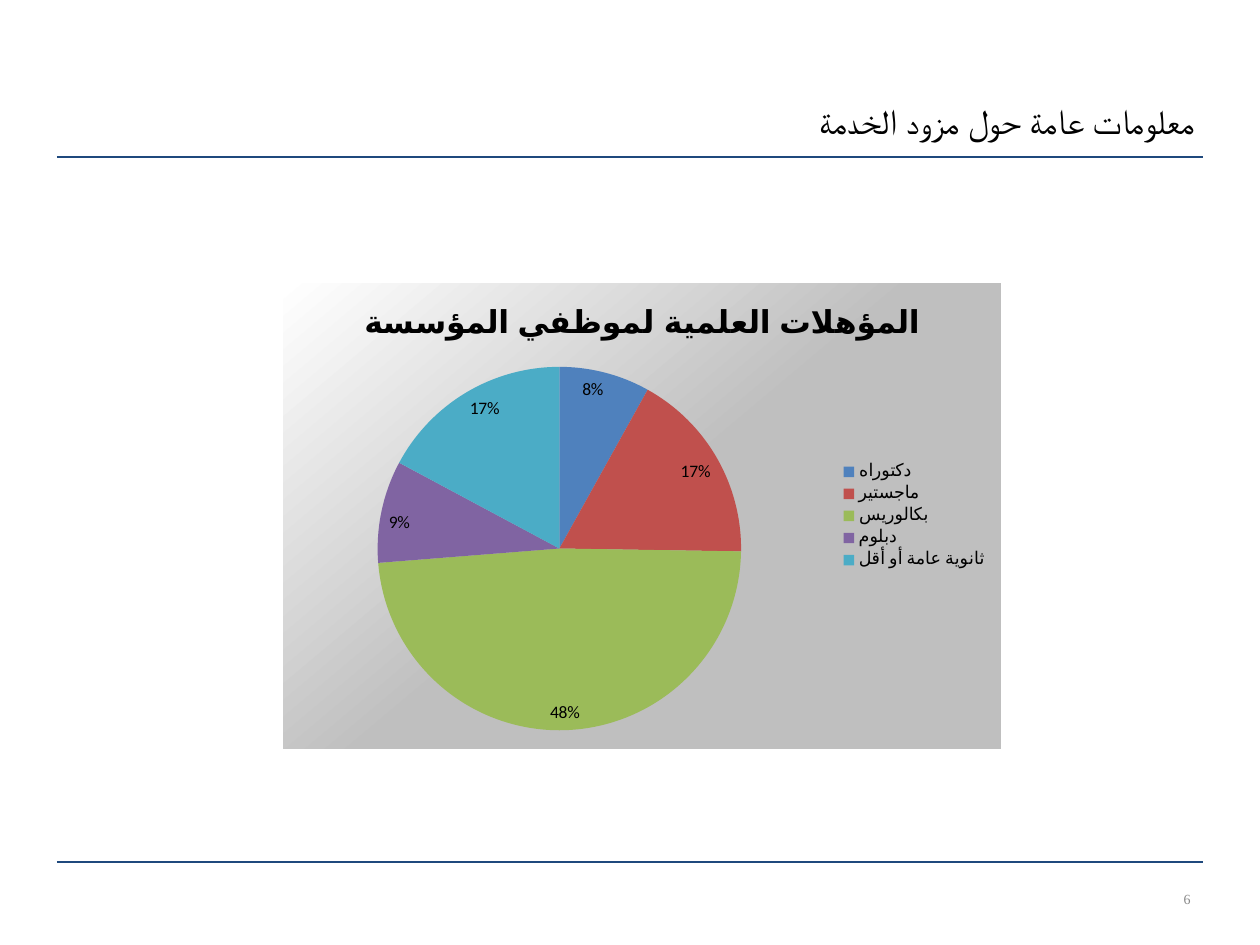
import pptx
import pptx.util
import pptx.chart.data
import pptx.dml.color
import pptx.enum.chart
import pptx.enum.shapes
import pptx.enum.text
import pptx.oxml
import pptx.oxml.ns
import lxml.etree

SCALE = 914400 // 126
THEME = {
    "rule": "1F497D", "text": "000000", "muted": "898989",
    "slices": ["4F81BD", "C0504D", "9BBB59", "8064A2", "4BACC6"],
    "backdrop": [(0, "FFFFFF"), (50, "BFBFBF"), (100, "BFBFBF")], "angle": 50,
    "heading_size": 20, "chart_title_size": 18, "chart_size": 10, "number_size": 8,
}
HEADING = "معلومات عامة حول مزود الخدمة"
PAGE_NUMBER = "6"
CHART_TITLE = "المؤهلات العلمية لموظفي المؤسسة"
QUALIFICATIONS = [
    ("دكتوراه", 8), ("ماجستير", 17), ("بكالوريس", 48), ("دبلوم", 9),
    ("ثانوية عامة أو أقل", 17),
]
RULE_SPAN = (57, 1203)
RULE_TOPS = (157, 862)
HEADING_AREA = (291, 37, 916, 111)
NUMBER_AREA = (1089, 871, 114, 55)
CHART_AREA = (283, 283, 718, 466)
PIE_LAYOUT = {"x": 0.13, "y": 0.18, "w": 0.51, "h": 0.78}


def emu(*lengths):
    return [pptx.util.Emu(length * SCALE) for length in lengths]


def rgb(value):
    return pptx.dml.color.RGBColor.from_string(value)


def set_font(font, size, color, name, bold=False):
    font.color.rgb = rgb(color)
    formats = {"size": pptx.util.Pt(size), "name": name, "bold": bold}
    for key, value in formats.items():
        setattr(font, key, value)


def add_rule(page, top):
    left, right = RULE_SPAN
    rule = page.shapes.add_connector(
        pptx.enum.shapes.MSO_CONNECTOR.STRAIGHT, *emu(left, top, right, top))
    rule.line.color.rgb = rgb(THEME["rule"])
    rule.line.width = pptx.util.Pt(0.75)
    properties = rule.element.find(pptx.oxml.ns.qn("p:spPr"))
    lxml.etree.SubElement(properties, pptx.oxml.ns.qn("a:effectLst"))


def add_text(page, area, text, anchor, size, color, name, rtl=False):
    frame = page.shapes.add_textbox(*emu(*area)).text_frame
    formats = {"word_wrap": True, "vertical_anchor": anchor}
    for key, value in formats.items():
        setattr(frame, key, value)
    para = frame.paragraphs[0]
    para.alignment = pptx.enum.text.PP_ALIGN.RIGHT
    if rtl:
        para._p.get_or_add_pPr().set("rtl", "1")
    span = para.add_run()
    span.text = text
    set_font(span.font, size, color, name)


def fill_backdrop(chart):
    stops = "".join(
        f'<a:gs pos="{place * 1000}"><a:srgbClr val="{color}"/></a:gs>'
        for place, color in THEME["backdrop"])
    backdrop = pptx.oxml.parse_xml(
        f'<c:spPr {pptx.oxml.ns.nsdecls("c", "a")}><a:gradFill><a:gsLst>{stops}</a:gsLst>'
        f'<a:lin ang="{THEME["angle"] * 60000}" scaled="0"/></a:gradFill>'
        '<a:ln><a:noFill/></a:ln></c:spPr>')
    chart.element.find(pptx.oxml.ns.qn("c:chart")).addnext(backdrop)


def place_pie(chart):
    area = chart.element.find(".//" + pptx.oxml.ns.qn("c:plotArea"))
    for layout in area.findall(pptx.oxml.ns.qn("c:layout")):
        area.remove(layout)
    sizes = "".join(f'<c:{key} val="{value}"/>' for key, value in PIE_LAYOUT.items())
    area.insert(0, pptx.oxml.parse_xml(
        f'<c:layout {pptx.oxml.ns.nsdecls("c")}><c:manualLayout>'
        '<c:layoutTarget val="inner"/><c:xMode val="edge"/><c:yMode val="edge"/>'
        f'{sizes}</c:manualLayout></c:layout>'))


def add_pie(page):
    names, values = zip(*QUALIFICATIONS)
    table = pptx.chart.data.CategoryChartData()
    table.categories = names
    table.add_series("Series 1", values)
    chart = page.shapes.add_chart(
        pptx.enum.chart.XL_CHART_TYPE.PIE, *emu(*CHART_AREA), table).chart
    set_font(chart.font, THEME["chart_size"], THEME["text"], "Calibri")

    chart.has_title = True
    para = chart.chart_title.text_frame.paragraphs[0]
    span = para.add_run()
    span.text = CHART_TITLE
    set_font(span.font, THEME["chart_title_size"], THEME["text"], "Calibri", bold=True)

    chart.has_legend = True
    chart.legend.position = pptx.enum.chart.XL_LEGEND_POSITION.RIGHT
    chart.legend.include_in_layout = False

    plot = chart.plots[0]
    plot.vary_by_categories = True
    plot.has_data_labels = True
    formats = {
        "show_percentage": True, "show_value": False,
        "number_format": "0%", "number_format_is_linked": False,
        "position": pptx.enum.chart.XL_LABEL_POSITION.INSIDE_END,
    }
    for key, value in formats.items():
        setattr(plot.data_labels, key, value)
    for index, color in enumerate(THEME["slices"]):
        fill = plot.series[0].points[index].format.fill
        fill.solid()
        fill.fore_color.rgb = rgb(color)
    fill_backdrop(chart)
    place_pie(chart)


def main():
    deck = pptx.Presentation()
    deck.slide_width, deck.slide_height = pptx.util.Inches(10), pptx.util.Inches(7.5)
    page = deck.slides.add_slide(deck.slide_layouts[6])
    for top in RULE_TOPS:
        add_rule(page, top)
    anchors = pptx.enum.text.MSO_ANCHOR
    add_text(page, NUMBER_AREA, PAGE_NUMBER, anchors.MIDDLE,
             THEME["number_size"], THEME["muted"], "Times New Roman")
    add_text(page, HEADING_AREA, HEADING, anchors.BOTTOM,
             THEME["heading_size"], THEME["text"], "Roboto", rtl=True)
    add_pie(page)
    deck.save("out.pptx")


if __name__ == "__main__":
    main()
